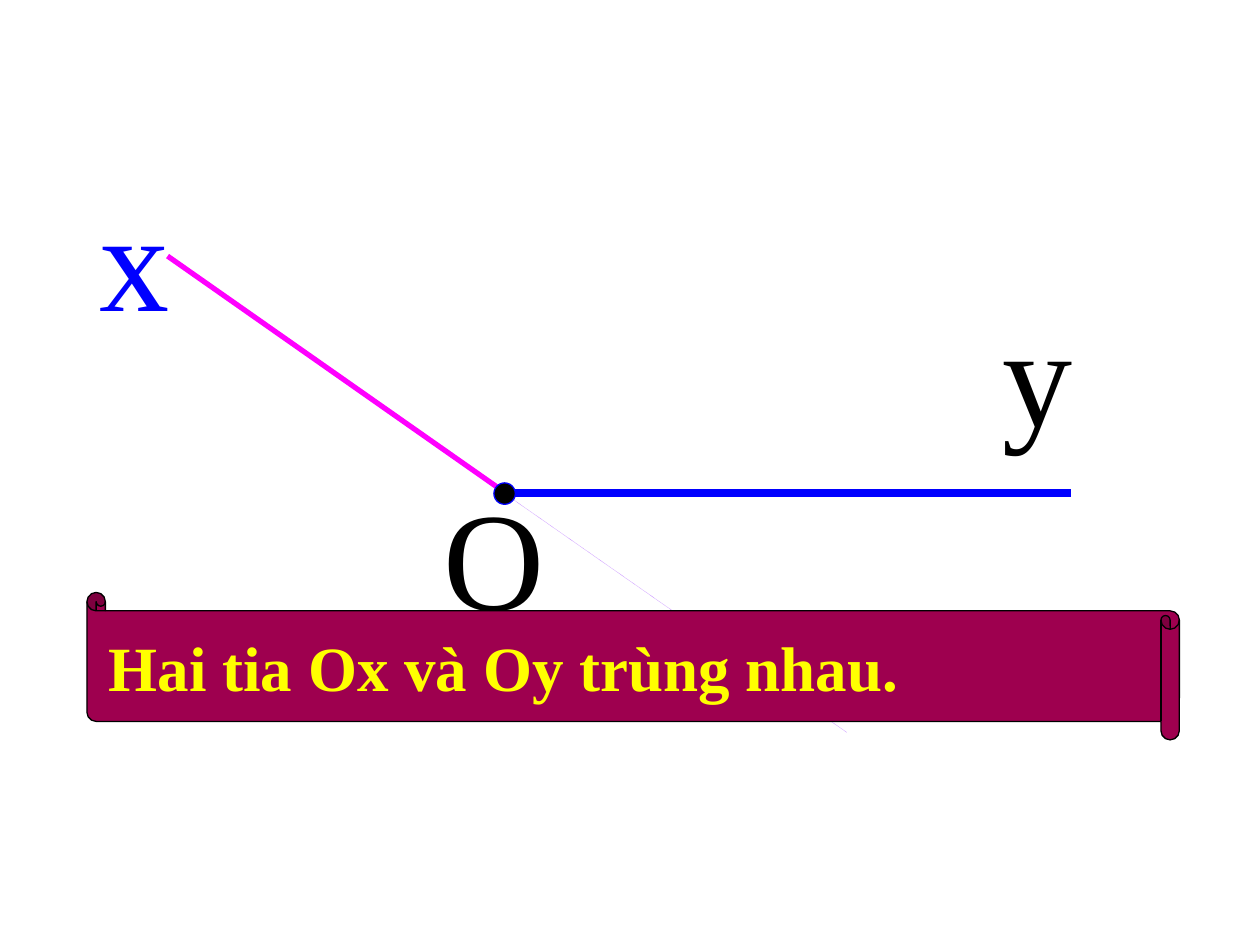
from typing import NamedTuple, Optional

from lxml.etree import SubElement
from pptx import Presentation
from pptx.dml.color import RGBColor
from pptx.enum.dml import MSO_LINE
from pptx.enum.shapes import MSO_CONNECTOR, MSO_SHAPE
from pptx.enum.text import MSO_ANCHOR, MSO_AUTO_SIZE, PP_ALIGN
from pptx.oxml.ns import qn
from pptx.slide import Slide
from pptx.util import Inches, Pt

BLACK = RGBColor(0x00, 0x00, 0x00)
BLUE = RGBColor(0x00, 0x00, 0xFF)
MAGENTA = RGBColor(0xFF, 0x00, 0xFF)
LILAC = RGBColor(0xCC, 0x99, 0xFF)
MAROON = RGBColor(0x9E, 0x00, 0x4F)
YELLOW = RGBColor(0xFF, 0xFF, 0x00)
FONT = "Times New Roman"
SLIDE_WIDTH, SLIDE_HEIGHT = Inches(10), Inches(7.5)
LABEL_HEIGHT = 1.45 / 7.5


class Ray(NamedTuple):
    """A straight line whose ends are shares of the slide's size."""

    start: tuple[float, float]
    end: tuple[float, float]
    color: RGBColor
    weight: float
    dash: Optional[MSO_LINE] = None


class Label(NamedTuple):
    """A point name placed by shares of the slide's size."""

    text: str
    left: float
    top: float
    width: float
    color: RGBColor


RAYS = (
    Ray((0.408, 0.528), (0.133, 0.271), MAGENTA, 3),
    Ray((0.672, 0.775), (0.397, 0.519), LILAC, 0.25, MSO_LINE.ROUND_DOT),
    Ray((0.408, 0.522), (0.85, 0.522), BLUE, 4.5),
)
LABELS = (
    Label("O", 0.342, 0.491, 0.058, BLACK),
    Label("y", 0.786, 0.297, 0.042, BLACK),
    Label("x", 0.069, 0.175, 0.075, BLUE),
)


def across(share: float) -> int:
    """Return a share of the slide's width."""
    return round(SLIDE_WIDTH * share)


def down(share: float) -> int:
    """Return a share of the slide's height."""
    return round(SLIDE_HEIGHT * share)


def draw_ray(slide: Slide, ray: Ray) -> None:
    """Draw one ray."""
    (x1, y1), (x2, y2) = ray.start, ray.end
    connector = slide.shapes.add_connector(
        MSO_CONNECTOR.STRAIGHT, across(x1), down(y1), across(x2), down(y2)
    )
    connector.line.color.rgb = ray.color
    connector.line.width = Pt(ray.weight)
    if ray.dash is not None:
        connector.line.dash_style = ray.dash
    SubElement(connector._element.spPr, qn("a:effectLst"))


def draw_origin(slide: Slide) -> None:
    """Draw the common end point of the rays."""
    diameter = across(0.017)
    shape = slide.shapes.add_shape(
        MSO_SHAPE.OVAL, across(0.392), down(0.511), diameter, diameter
    )
    shape.shadow.inherit = False
    shape.fill.solid()
    shape.fill.fore_color.rgb = BLACK
    shape.line.color.rgb = BLUE
    shape.line.width = Pt(0.75)


def draw_label(slide: Slide, label: Label) -> None:
    """Write the name of a point or ray."""
    text_box = slide.shapes.add_textbox(
        across(label.left), down(label.top), across(label.width), down(LABEL_HEIGHT)
    )
    frame = text_box.text_frame
    frame.word_wrap = True
    frame.auto_size = MSO_AUTO_SIZE.SHAPE_TO_FIT_TEXT
    paragraph = frame.paragraphs[0]
    paragraph.text = label.text
    paragraph.font.name = FONT
    paragraph.font.size = Pt(80)
    paragraph.font.color.rgb = label.color
    spacing = paragraph._p.get_or_add_pPr().get_or_add_spcBef()
    SubElement(spacing, qn("a:spcPct")).set("val", "50000")


def draw_scroll(slide: Slide, text: str) -> None:
    """Draw the statement on a scroll turned on its side."""
    shape = slide.shapes.add_shape(
        MSO_SHAPE.VERTICAL_SCROLL, across(0.444), down(0.127), across(0.117), down(1.156)
    )
    shape.rotation = 90
    shape.adjustments[0] = 0.125
    shape.shadow.inherit = False
    shape.fill.solid()
    shape.fill.fore_color.rgb = MAROON
    shape.line.color.rgb = BLACK
    shape.line.width = Pt(0.75)
    frame = shape.text_frame
    frame.word_wrap = False
    frame.vertical_anchor = MSO_ANCHOR.MIDDLE
    body = frame._txBody.bodyPr
    body.set("rot", "10800000")
    body.set("vert", "eaVert")
    paragraph = frame.paragraphs[0]
    paragraph.text = text
    paragraph.alignment = PP_ALIGN.CENTER
    paragraph.font.name = FONT
    paragraph.font.size = Pt(36)
    paragraph.font.bold = True
    paragraph.font.color.rgb = YELLOW


def main() -> None:
    """Build and save the slide."""
    presentation = Presentation()
    presentation.slide_width = SLIDE_WIDTH
    presentation.slide_height = SLIDE_HEIGHT
    slide = presentation.slides.add_slide(presentation.slide_layouts[6])
    for ray in RAYS:
        draw_ray(slide, ray)
    draw_origin(slide)
    for label in LABELS:
        draw_label(slide, label)
    draw_scroll(slide, "Hai tia Ox và Oy trùng nhau.")
    presentation.save("out.pptx")


if __name__ == "__main__":
    main()
